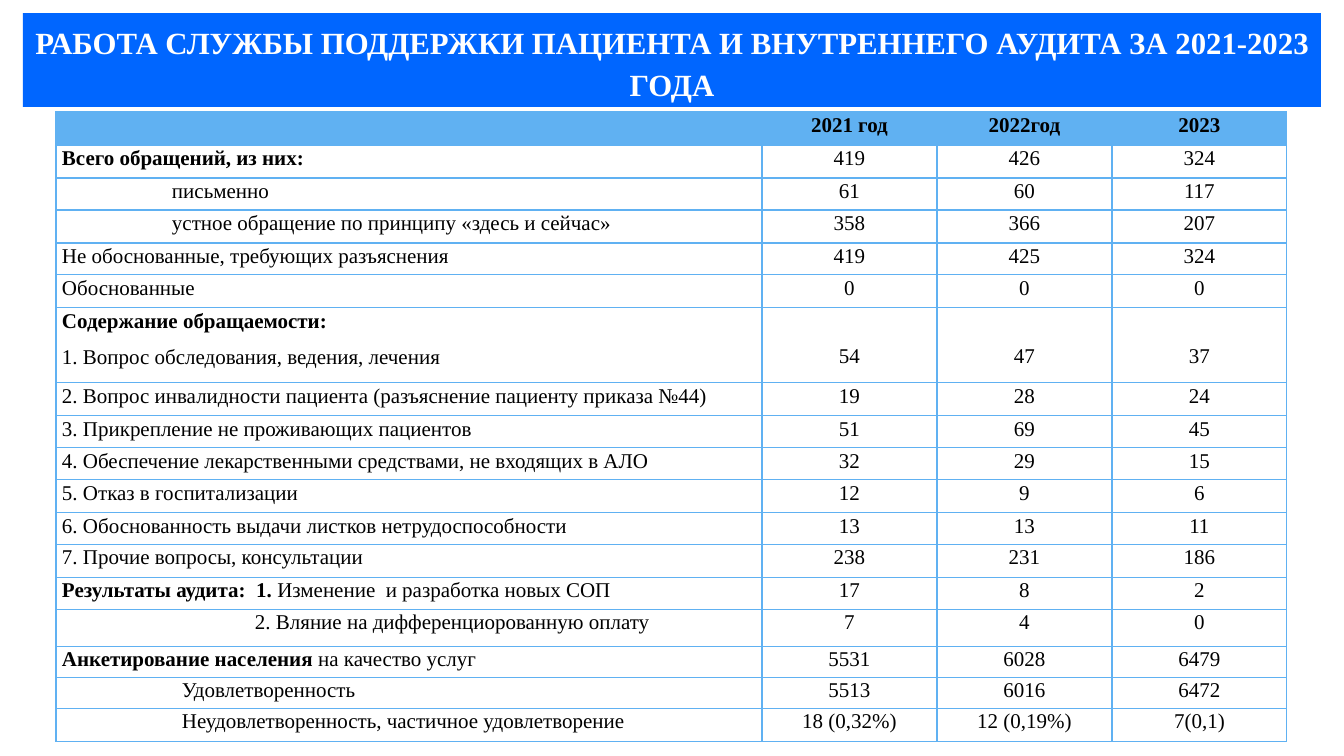
from itertools import pairwise

from lxml import etree
from pptx import Presentation
from pptx.dml.color import RGBColor
from pptx.enum.shapes import MSO_SHAPE
from pptx.enum.text import MSO_ANCHOR, MSO_AUTO_SIZE, PP_ALIGN
from pptx.oxml.ns import qn
from pptx.util import Pt

RECTANGLE = MSO_SHAPE.RECTANGLE
TOP = MSO_ANCHOR.TOP
GROW = MSO_AUTO_SIZE.SHAPE_TO_FIT_TEXT
LEFT, CENTER = PP_ALIGN.LEFT, PP_ALIGN.CENTER

PX_PER_INCH = 100.8
FONT = "Times New Roman"
COLORS = {"banner": "0066FF", "grid": "60B1F2", "text": "000000", "banner_text": "FFFFFF"}

TITLE = "РАБОТА СЛУЖБЫ ПОДДЕРЖКИ ПАЦИЕНТА И ВНУТРЕННЕГО АУДИТА ЗА 2021-2023 ГОДА"
YEARS = ["2021 год", "2022год", "2023"]
COLUMN_WIDTHS = [706, 175, 175, 175]
ROW_EDGES = [112, 145, 178, 210, 243, 275, 308, 383, 416, 448,
             480, 513, 545, 578, 610, 647, 678, 709, 742]
TABLE_LEFT = 56
CELL_INSET = 6
CONTENT_OFFSET = 35

APPEALS = [
    ([("Всего обращений, из них:", "")], 0, ["419", "426", "324"]),
    ([("", "письменно")], 110, ["61", "60", "117"]),
    ([("", "устное обращение по принципу «здесь и сейчас»")], 110, ["358", "366", "207"]),
    ([("", "Не обоснованные, требующих разъяснения")], 0, ["419", "425", "324"]),
    ([("", "Обоснованные")], 0, ["0", "0", "0"]),
    ([("Содержание обращаемости:", ""), ("", "1. Вопрос обследования, ведения, лечения")],
     0, ["54", "47", "37"]),
    ([("", "2. Вопрос инвалидности пациента (разъяснение пациенту приказа №44)")],
     0, ["19", "28", "24"]),
    ([("", "3. Прикрепление не проживающих пациентов")], 0, ["51", "69", "45"]),
    ([("", "4. Обеспечение лекарственными средствами, не входящих в АЛО")],
     0, ["32", "29", "15"]),
    ([("", "5. Отказ в госпитализации")], 0, ["12", "9", "6"]),
    ([("", "6. Обоснованность выдачи листков нетрудоспособности")], 0, ["13", "13", "11"]),
    ([("", "7. Прочие вопросы, консультации")], 0, ["238", "231", "186"]),
    ([("Результаты аудита:  1. ", "Изменение  и разработка новых СОП")],
     0, ["17", "8", "2"]),
    ([("", "2. Вляние на дифференциорованную оплату")], 193, ["7", "4", "0"]),
    ([("Анкетирование населения ", "на качество услуг")], 0, ["5531", "6028", "6479"]),
    ([("", "Удовлетворенность")], 120, ["5513", "6016", "6472"]),
    ([("", "Неудовлетворенность, частичное удовлетворение")],
     120, ["18 (0,32%)", "12 (0,19%)", "7(0,1)"]),
]


def px(length):
    return round(length * 914400 / PX_PER_INCH)


def color(name):
    return RGBColor.from_string(COLORS[name])


def write_text(frame, lines, size=15, ink="text", align=LEFT, spacing=1.07, after=8, indent=0):
    for index, (strong, regular) in enumerate(lines):
        paragraph = frame.paragraphs[0] if index == 0 else frame.add_paragraph()
        paragraph.alignment = align
        paragraph.line_spacing = spacing
        paragraph.space_after = Pt(after)
        if indent:
            paragraph._p.get_or_add_pPr().set("marL", str(px(indent)))
        for words, bold in ((strong, True), (regular, False)):
            if words:
                run = paragraph.add_run()
                run.text = words
                run.font.name = FONT
                run.font.size = Pt(size)
                run.font.bold = bold
                run.font.color.rgb = color(ink)


def add_banner(slide):
    banner = slide.shapes.add_shape(RECTANGLE, px(23), px(13), px(1298), px(94))
    banner.shadow.inherit = False
    banner.fill.solid()
    banner.fill.fore_color.rgb = color("banner")
    banner.line.fill.background()
    frame = banner.text_frame
    frame.word_wrap = True
    frame.auto_size = GROW
    frame.vertical_anchor = TOP
    write_text(frame, [(TITLE, "")], size=22, ink="banner_text", align=CENTER,
               spacing=1.15, after=10)


def style_cell(cell, top=0, header=False):
    cell.margin_left = cell.margin_right = px(CELL_INSET)
    cell.margin_top, cell.margin_bottom = px(top), 0
    properties = cell._tc.get_or_add_tcPr()
    for side in ("a:lnL", "a:lnR", "a:lnT", "a:lnB"):
        border = etree.SubElement(properties, qn(side), w=str(Pt(1)))
        paint = etree.SubElement(border, qn("a:solidFill"))
        etree.SubElement(paint, qn("a:srgbClr"), val=COLORS["grid"])
    if header:
        cell.fill.solid()
        cell.fill.fore_color.rgb = color("grid")
    else:
        cell.fill.background()


def add_appeals_table(slide):
    heights = [bottom - top for top, bottom in pairwise(ROW_EDGES)]
    table = slide.shapes.add_table(
        len(heights), len(COLUMN_WIDTHS), px(TABLE_LEFT), px(ROW_EDGES[0]),
        px(sum(COLUMN_WIDTHS)), px(sum(heights))).table
    table.first_row = table.horz_banding = False
    for column, width in zip(table.columns, COLUMN_WIDTHS):
        column.width = px(width)
    for row, height in zip(table.rows, heights):
        row.height = px(height)

    style_cell(table.cell(0, 0), header=True)
    for column, year in enumerate(YEARS, 1):
        cell = table.cell(0, column)
        style_cell(cell, header=True)
        write_text(cell.text_frame, [(year, "")], align=CENTER)

    for row, (label, indent, counts) in enumerate(APPEALS, 1):
        label_cell = table.cell(row, 0)
        style_cell(label_cell)
        write_text(label_cell.text_frame, label, indent=indent)
        offset = CONTENT_OFFSET * (len(label) - 1)
        for column, count in enumerate(counts, 1):
            cell = table.cell(row, column)
            style_cell(cell, top=offset)
            write_text(cell.text_frame, [("", count)], align=CENTER)


def main():
    deck = Presentation()
    deck.slide_width, deck.slide_height = px(1344), px(756)
    slide = deck.slides.add_slide(deck.slide_layouts[6])
    add_banner(slide)
    add_appeals_table(slide)
    deck.save("out.pptx")


if __name__ == "__main__":
    main()
